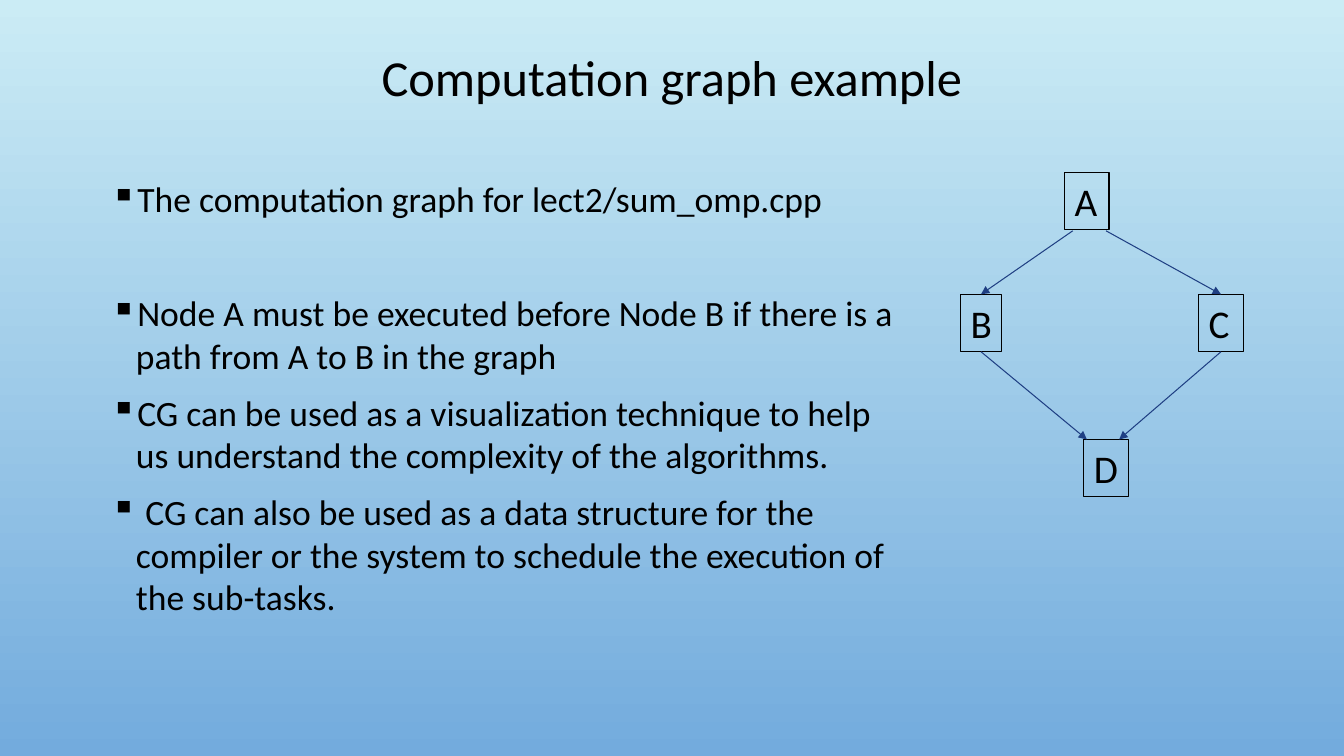
from dataclasses import dataclass

import pptx
import pptx.dml.color
import pptx.enum.shapes
import pptx.enum.text
import pptx.oxml
import pptx.oxml.ns
import pptx.util
from pptx.util import Inches

FONT = "Calibri"
BLACK = "000000"
ARROW_BLUE = "1F3F83"
BODY_SIZE = 25.4


@dataclass
class Bullet:
    text: str
    before: float = 10


@dataclass
class Node:
    name: str
    left: float
    top: float
    width: float = 0.44
    height: float = 0.57


@dataclass
class Edge:
    x1: float
    y1: float
    x2: float
    y2: float


BULLETS = [
    Bullet("The computation graph for lect2/sum_omp.cpp", 0),
    Bullet("Node A must be executed before Node B if there is a path from A to B in the graph", 51),
    Bullet("CG can be used as a visualization technique to help us understand "
           "the complexity of the algorithms."),
    Bullet(" CG can also be used as a data structure for the compiler or the system "
           "to schedule the execution of the sub-tasks."),
]
NODES = [
    Node("A", 10.56, 1.71),
    Node("D", 10.75, 4.36),
    Node("C", 11.89, 2.92),
    Node("B", 9.53, 2.92, width=0.4),
]
EDGES = [
    Edge(10.64, 2.29, 9.73, 2.92),
    Edge(10.97, 2.29, 12.11, 2.92),
    Edge(9.73, 3.49, 10.78, 4.36),
    Edge(12.11, 3.49, 11.1, 4.36),
]


def color(value: str) -> pptx.dml.color.RGBColor:
    return pptx.dml.color.RGBColor.from_string(value)


def add_child(parent, xml: str) -> None:
    """Append a DrawingML element written as <a:.../>."""
    ns = pptx.oxml.ns.nsdecls("a")
    parent.append(pptx.oxml.parse_xml(xml.replace("/>", f" {ns}/>")))


def add_run(p, text: str, size: float) -> None:
    r = p.add_run()
    r.text = text
    r.font.name = FONT
    r.font.size = pptx.util.Pt(size)
    r.font.color.rgb = color(BLACK)


def add_background(slide) -> None:
    fill = slide.background.fill
    fill.gradient()
    fill.gradient_angle = 270
    for stop, value in zip(fill.gradient_stops, ("CBECF5", "73ABDD")):
        stop.color.rgb = color(value)


def add_title(slide, text: str) -> None:
    sp = slide.shapes.add_textbox(Inches(1), Inches(0.27), Inches(11.33), Inches(1.05))
    tf = sp.text_frame
    tf.word_wrap = True
    tf.vertical_anchor = pptx.enum.text.MSO_ANCHOR.MIDDLE
    p = tf.paragraphs[0]
    p.alignment = pptx.enum.text.PP_ALIGN.CENTER
    p.line_spacing = 0.9
    add_run(p, text, 36)


def add_bullets(slide, bullets: list[Bullet]) -> None:
    sp = slide.shapes.add_textbox(Inches(1), Inches(1.71), Inches(8.14), Inches(4.81))
    tf = sp.text_frame
    tf.word_wrap = True
    for i, bullet in enumerate(bullets):
        p = tf.add_paragraph() if i else tf.paragraphs[0]
        p.space_before = pptx.util.Pt(bullet.before)
        pPr = p._p.get_or_add_pPr()
        pPr.set("marL", str(Inches(0.25)))
        pPr.set("indent", str(-Inches(0.25)))
        add_child(pPr, '<a:buChar char="▪"/>')
        add_run(p, bullet.text, BODY_SIZE)


def add_node(slide, node: Node) -> None:
    sp = slide.shapes.add_shape(
        pptx.enum.shapes.MSO_SHAPE.RECTANGLE,
        Inches(node.left), Inches(node.top), Inches(node.width), Inches(node.height))
    sp.shadow.inherit = False
    sp.fill.background()
    sp.line.color.rgb = color(BLACK)
    sp.line.width = pptx.util.Pt(0.75)
    tf = sp.text_frame
    tf.word_wrap = False
    tf.auto_size = pptx.enum.text.MSO_AUTO_SIZE.SHAPE_TO_FIT_TEXT
    tf.vertical_anchor = pptx.enum.text.MSO_ANCHOR.TOP
    p = tf.paragraphs[0]
    p.alignment = pptx.enum.text.PP_ALIGN.LEFT
    add_run(p, node.name, 28)


def add_edge(slide, edge: Edge) -> None:
    line = slide.shapes.add_connector(
        pptx.enum.shapes.MSO_CONNECTOR.STRAIGHT,
        Inches(edge.x1), Inches(edge.y1), Inches(edge.x2), Inches(edge.y2))
    line.line.color.rgb = color(ARROW_BLUE)
    line.line.width = pptx.util.Pt(0.75)
    add_child(line.line._get_or_add_ln(), '<a:tailEnd type="triangle"/>')
    add_child(line._element.spPr, "<a:effectLst/>")


def main() -> None:
    prs = pptx.Presentation()
    prs.slide_width = Inches(13.33)
    prs.slide_height = Inches(7.5)
    slide = prs.slides.add_slide(prs.slide_layouts[6])

    # Background and text
    add_background(slide)
    add_title(slide, "Computation graph example")
    add_bullets(slide, BULLETS)

    # Computation graph
    for node in NODES:
        add_node(slide, node)
    for edge in EDGES:
        add_edge(slide, edge)

    prs.save("out.pptx")


if __name__ == "__main__":
    main()
